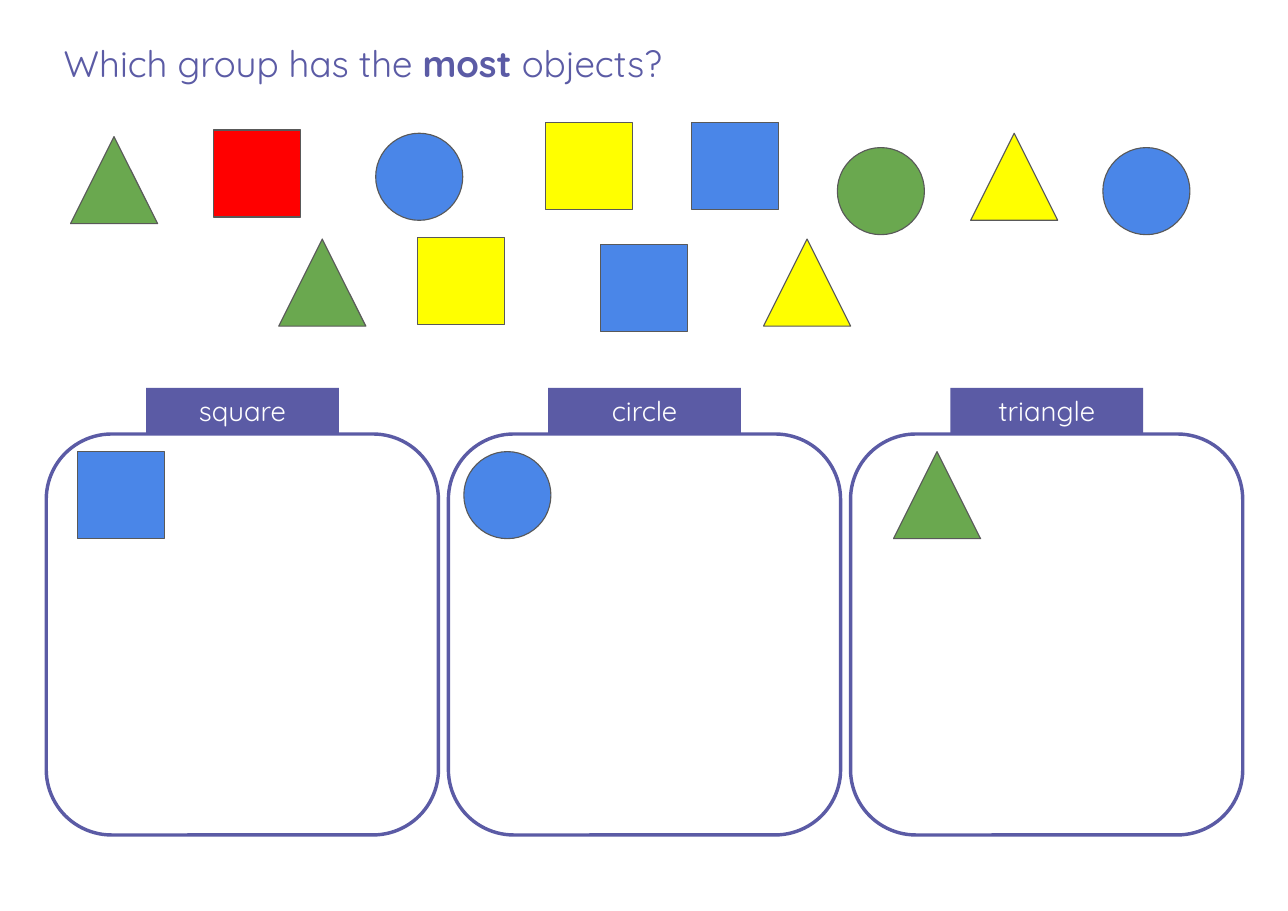
from pptx import Presentation
from pptx.dml.color import RGBColor
from pptx.enum.shapes import MSO_SHAPE
from pptx.enum.text import MSO_ANCHOR, PP_ALIGN
from pptx.util import Inches, Pt

SQUARE, CIRCLE = MSO_SHAPE.RECTANGLE, MSO_SHAPE.OVAL
TRIANGLE, FRAME = MSO_SHAPE.ISOSCELES_TRIANGLE, MSO_SHAPE.ROUNDED_RECTANGLE
MIDDLE, TOP = MSO_ANCHOR.MIDDLE, MSO_ANCHOR.TOP
LEFT, CENTER = PP_ALIGN.LEFT, PP_ALIGN.CENTER

THEME = {
    "font": "Quicksand", "title_size": 24, "label_size": 18,
    "purple": "5B5BA5", "white": "FFFFFF", "outline": "595959",
    "blue": "4A86E8", "green": "6AA84F", "yellow": "FFFF00", "red": "FF0000",
    "object_line": 0.75, "frame_line": 2.25,
}

QUESTION = [("Which group has the ", False), ("most", True), (" objects?", False)]

GROUPS = [
    ("square", SQUARE, "blue", 0.7),
    ("circle", CIRCLE, "blue", 4.21),
    ("triangle", TRIANGLE, "green", 8.11),
]

OBJECTS = [
    (TRIANGLE, "green", 0.64, 1.24),
    (SQUARE, "red", 1.94, 1.18),
    (CIRCLE, "blue", 3.41, 1.21),
    (SQUARE, "yellow", 4.95, 1.11),
    (SQUARE, "blue", 6.28, 1.11),
    (CIRCLE, "green", 7.6, 1.34),
    (TRIANGLE, "yellow", 8.81, 1.21),
    (CIRCLE, "blue", 10.01, 1.34),
    (TRIANGLE, "green", 2.53, 2.17),
    (SQUARE, "yellow", 3.79, 2.16),
    (SQUARE, "blue", 5.45, 2.22),
    (TRIANGLE, "yellow", 6.93, 2.17),
]

OBJECT_SIZE = 0.79
EXAMPLE_TOP = 4.1
FRAME_LEFT, FRAME_TOP, FRAME_WIDTH, FRAME_HEIGHT = 0.42, 3.94, 3.56, 3.64
FRAME_STEP = 3.65
LABEL_WIDTH, LABEL_HEIGHT = 1.75, 0.42


def color(name):
    return RGBColor.from_string(THEME[name])


def add_figure(page, kind, bounds, fill=None, line=None, line_width=0):
    figure = page.shapes.add_shape(kind, *map(Inches, bounds))
    figure.shadow.inherit = False
    if fill:
        figure.fill.solid()
        figure.fill.fore_color.rgb = color(fill)
    else:
        figure.fill.background()
    if line:
        figure.line.color.rgb = color(line)
        figure.line.width = Pt(line_width)
    else:
        figure.line.fill.background()
    return figure


def add_object(page, kind, fill, left, top):
    bounds = (left, top, OBJECT_SIZE, OBJECT_SIZE)
    add_figure(page, kind, bounds, fill, "outline", THEME["object_line"])


def write(box, spans, size, ink, anchor, alignment):
    frame = box.text_frame
    layout = {"word_wrap": True, "vertical_anchor": anchor}
    for side in ("left", "right", "top", "bottom"):
        layout[f"margin_{side}"] = Inches(0.1)
    for name, value in layout.items():
        setattr(frame, name, value)
    para = frame.paragraphs[0]
    para.alignment = alignment
    for text, bold in spans:
        span = para.add_run()
        span.text = text
        style = {"name": THEME["font"], "size": Pt(THEME[size]), "bold": bold}
        for name, value in style.items():
            setattr(span.font, name, value)
        span.font.color.rgb = color(ink)


def add_group(page, index, label, kind, fill, example_left):
    left = FRAME_LEFT + index * FRAME_STEP
    add_figure(page, FRAME, (left, FRAME_TOP, FRAME_WIDTH, FRAME_HEIGHT),
               line="purple", line_width=THEME["frame_line"])
    label_left = left + (FRAME_WIDTH - LABEL_WIDTH) / 2
    label_bounds = (label_left, FRAME_TOP - LABEL_HEIGHT, LABEL_WIDTH, LABEL_HEIGHT)
    box = add_figure(page, SQUARE, label_bounds, "purple")
    write(box, [(label, False)], "label_size", "white", MIDDLE, CENTER)
    add_object(page, kind, fill, example_left, EXAMPLE_TOP)


def main():
    deck = Presentation()
    deck.slide_width, deck.slide_height = Inches(11.69), Inches(8.27)
    page = deck.slides.add_slide(deck.slide_layouts[6])
    title = page.shapes.add_textbox(*map(Inches, (0.48, 0.27, 10.74, 0.74)))
    write(title, QUESTION, "title_size", "purple", TOP, LEFT)
    for index, group in enumerate(GROUPS):
        add_group(page, index, *group)
    for item in OBJECTS:
        add_object(page, *item)
    deck.save("out.pptx")


if __name__ == "__main__":
    main()
